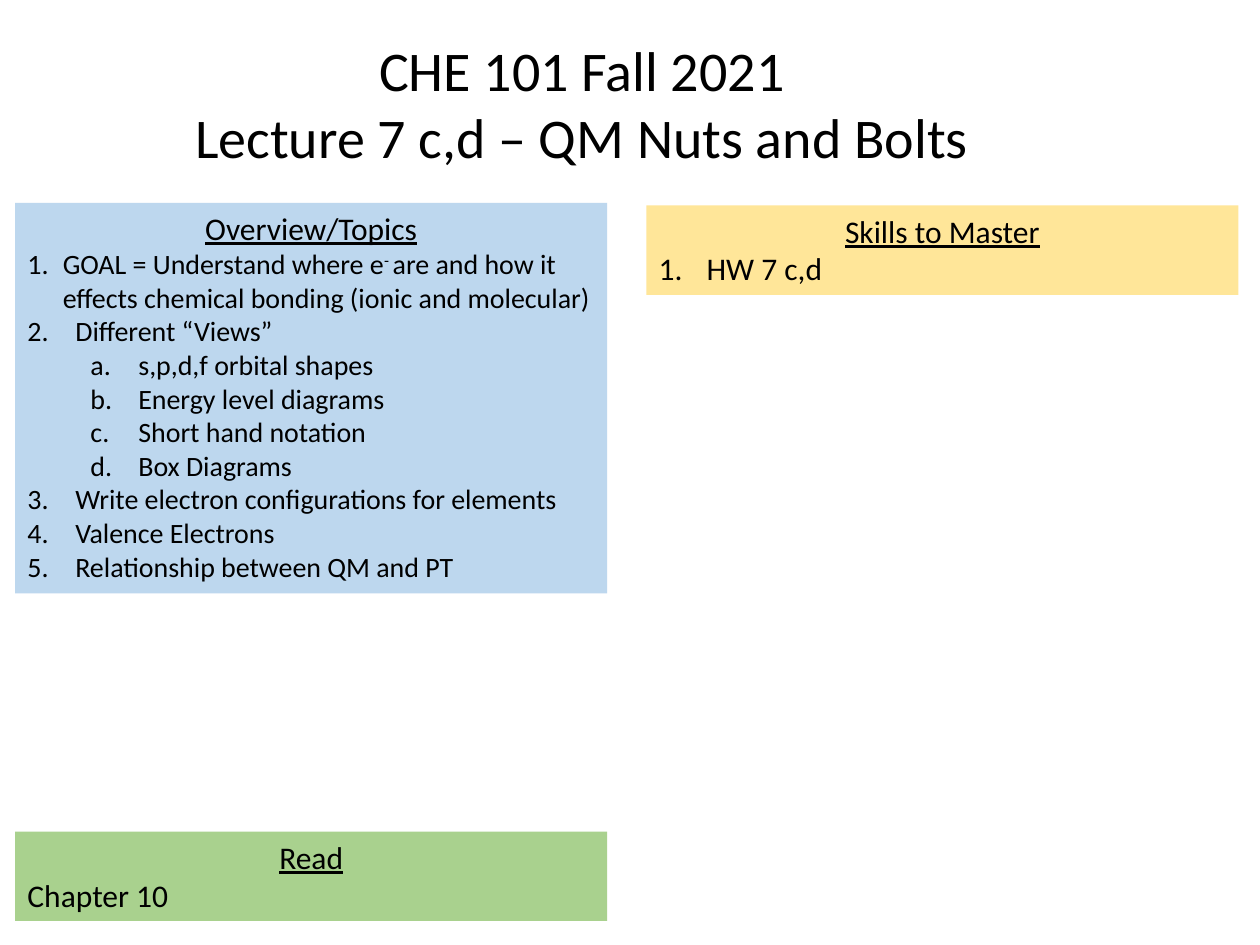
import pptx
import pptx.util
import pptx.dml.color
import pptx.enum.text
import lxml.etree

Inches = pptx.util.Inches
Pt = pptx.util.Pt
RGB = pptx.dml.color.RGBColor
Align = pptx.enum.text.PP_ALIGN
Anchor = pptx.enum.text.MSO_ANCHOR
Fit = pptx.enum.text.MSO_AUTO_SIZE

BLACK = RGB(0x00, 0x00, 0x00)
BLUE = RGB(0xBD, 0xD7, 0xEE)
GOLD = RGB(0xFF, 0xE6, 0x99)
GREEN = RGB(0xA9, 0xD1, 0x8E)

NUMBER = "arabicPeriod"
LETTER = "alphaLcPeriod"
LEFT, RIGHT, WIDE = 0.12, 5.13, 4.7


class Deck:
    font = "Calibri"

    def __init__(self, wide, high):
        self.file = pptx.Presentation()
        self.file.slide_width = Inches(wide)
        self.file.slide_height = Inches(high)
        self.slide = self.file.slides.add_slide(self.file.slide_layouts[5])

    def run(self, para, text, size, line=False, raised=False):
        run = para.add_run()
        run.text = text
        run.font.color.rgb = BLACK
        form = {"name": self.font, "size": Pt(size), "underline": line}
        for key, value in form.items():
            setattr(run.font, key, value)
        if raised:
            run._r.get_or_add_rPr().set("baseline", "30000")

    def title(self, lines, x, y, wide, high):
        shape = self.slide.shapes.title
        place = {"left": x, "top": y, "width": wide, "height": high}
        for key, value in place.items():
            setattr(shape, key, Inches(value))
        frame = shape.text_frame
        frame.word_wrap = False
        frame.auto_size = Fit.NONE
        frame.vertical_anchor = Anchor.TOP
        for i, text in enumerate(lines):
            para = frame.add_paragraph() if i else frame.paragraphs[0]
            para.alignment = Align.CENTER
            self.run(para, text, 32)

    def panel(self, head, x, y, high, fill):
        box = self.slide.shapes.add_textbox(
            Inches(x), Inches(y), Inches(WIDE), Inches(high))
        box.fill.solid()
        box.fill.fore_color.rgb = fill
        frame = box.text_frame
        frame.word_wrap = True
        frame.auto_size = Fit.SHAPE_TO_FIT_TEXT
        para = frame.paragraphs[0]
        para.alignment = Align.CENTER
        self.run(para, head, 18, line=True)
        return frame

    def item(self, frame, parts, size, mark=None, level=0, hang=0.38):
        para = frame.add_paragraph()
        para.level = level
        if mark:
            props = para._p.get_or_add_pPr()
            props.set("marL", str(Inches(hang + level * 0.5)))
            props.set("indent", str(-Inches(hang)))
            tag = pptx.oxml.ns.qn("a:buAutoNum")
            lxml.etree.SubElement(props, tag).set("type", mark)
        for i, text in enumerate(parts):
            self.run(para, text, size, raised=i == 1)


def main():
    deck = Deck(10, 7.5)
    topics = deck.panel("Overview/Topics", LEFT, 1.61, 3.1, BLUE)
    goal = ["GOAL = Understand where e", "- ",
            "are and how it effects chemical bonding (ionic and molecular)"]
    deck.item(topics, goal, 16, NUMBER, hang=0.28)
    for text, level in [
        ("Different “Views”", 0),
        ("s,p,d,f orbital shapes", 1),
        ("Energy level diagrams", 1),
        ("Short hand notation", 1),
        ("Box Diagrams", 1),
        ("Write electron configurations for elements", 0),
        ("Valence Electrons", 0),
        ("Relationship between QM and PT", 0),
    ]:
        deck.item(topics, [text], 16, LETTER if level else NUMBER, level)

    skills = deck.panel("Skills to Master", RIGHT, 1.63, 0.71, GOLD)
    deck.item(skills, ["HW 7 c,d"], 18, NUMBER)
    read = deck.panel("Read", LEFT, 6.6, 0.71, GREEN)
    deck.item(read, ["Chapter 10"], 18)

    deck.title(["CHE 101 Fall 2021", "Lecture 7 c,d – QM Nuts and Bolts"],
               1.42, 0.23, 6.4, 1.18)
    deck.file.save("out.pptx")


if __name__ == "__main__":
    main()
